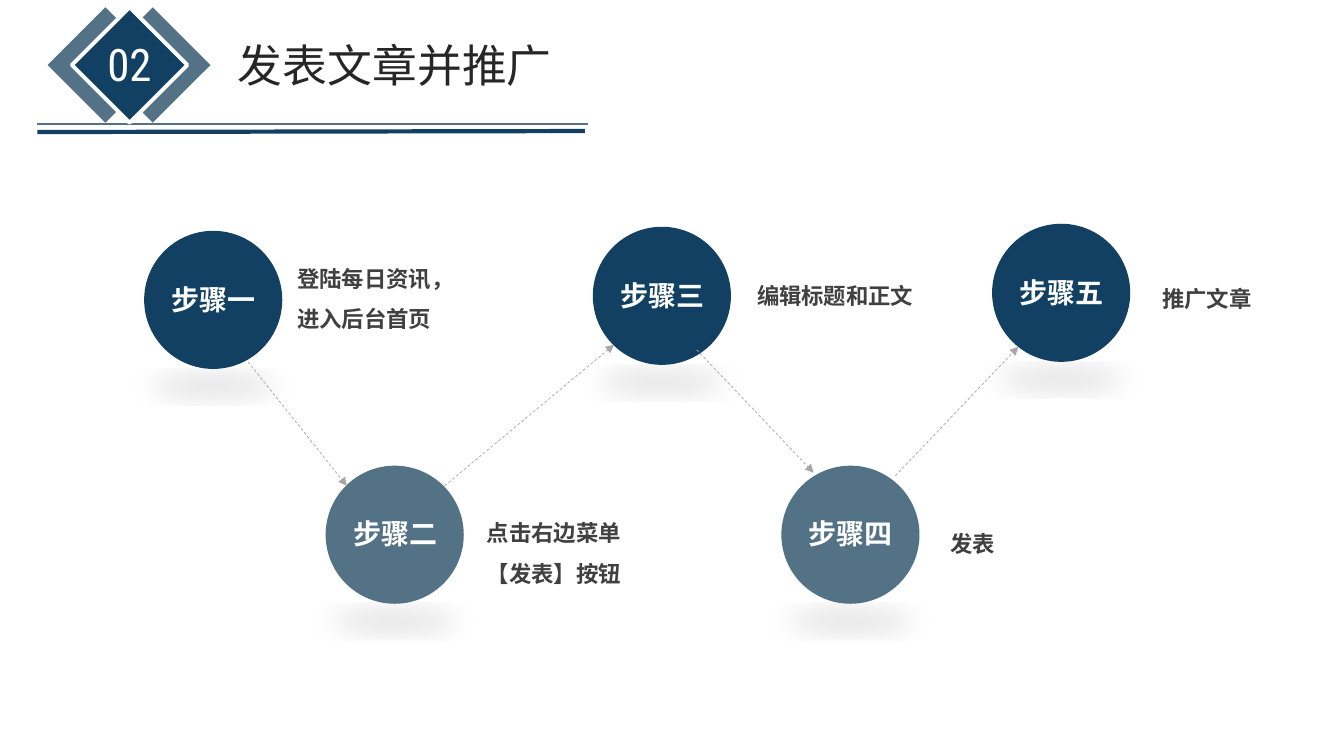
from lxml import etree
from pptx import Presentation
from pptx.dml.color import RGBColor
from pptx.enum.dml import MSO_LINE
from pptx.enum.shapes import MSO_CONNECTOR, MSO_SHAPE
from pptx.enum.text import MSO_ANCHOR, MSO_AUTO_SIZE, PP_ALIGN
from pptx.oxml import parse_xml
from pptx.oxml.ns import nsdecls, qn
from pptx.util import Inches, Pt

STRAIGHT = MSO_CONNECTOR.STRAIGHT
CIRCLE, DIAMOND = MSO_SHAPE.OVAL, MSO_SHAPE.ROUNDED_RECTANGLE
DASH = MSO_LINE.DASH
LEFT, CENTER = PP_ALIGN.LEFT, PP_ALIGN.CENTER
TOP, FIT = MSO_ANCHOR.TOP, MSO_AUTO_SIZE.SHAPE_TO_FIT_TEXT

NAVY = RGBColor(0x12, 0x40, 0x62)
SLATE = RGBColor(0x53, 0x72, 0x85)
WHITE = RGBColor(0xFF, 0xFF, 0xFF)
INK = RGBColor(0x26, 0x26, 0x26)
GRAY = RGBColor(0x40, 0x40, 0x40)
ARROW_GRAY = RGBColor(0xA6, 0xA6, 0xA6)

CJK = "Noto Sans CJK SC"
ROBOTO = "Roboto Condensed"
CIRCLE_SIZE = 1.37
CIRCLE_SHADOW = (
    f'<a:effectLst {nsdecls("a")}><a:outerShdw blurRad="241300" dist="38100" dir="5400000" '
    'sx="90000" sy="-19000" algn="b" rotWithShape="0">'
    '<a:srgbClr val="000000"><a:alpha val="10000"/></a:srgbClr></a:outerShdw></a:effectLst>'
)


class StepSlide:
    def __init__(self, deck):
        self.slide = deck.slides.add_slide(deck.slide_layouts[5])
        self.shapes = self.slide.shapes

    def set_text(self, box, text, size, color, font=CJK, bold=False, align=LEFT, spacing=1.0):
        frame = box.text_frame
        frame.word_wrap = True
        frame.auto_size = FIT
        frame.vertical_anchor = TOP
        paragraph = frame.paragraphs[0]
        paragraph.alignment = align
        paragraph.line_spacing = spacing
        run = paragraph.add_run()
        run.text = text
        run.font.size = Pt(size)
        run.font.bold = bold
        run.font.color.rgb = color
        run.font.name = font
        etree.SubElement(run.font._element, qn("a:ea")).set("typeface", CJK)

    def title(self, text, left, top, width, height):
        heading = self.shapes.title
        heading.left, heading.top = Inches(left), Inches(top)
        heading.width, heading.height = Inches(width), Inches(height)
        self.set_text(heading, text, 32, INK)

    def text(self, text, left, top, width, height, size, color, **style):
        box = self.shapes.add_textbox(Inches(left), Inches(top), Inches(width), Inches(height))
        self.set_text(box, text, size, color, **style)

    def block(self, preset, left, top, size, fill):
        block = self.shapes.add_shape(preset, Inches(left), Inches(top), Inches(size), Inches(size))
        block.shadow.inherit = False
        block.fill.solid()
        block.fill.fore_color.rgb = fill
        block.line.fill.background()
        return block

    def diamond(self, left, fill, outline=None):
        diamond = self.block(DIAMOND, left, 0.24, 0.81, fill)
        diamond.adjustments[0] = 0
        diamond.rotation = 45
        if outline:
            diamond.line.color.rgb = outline
            diamond.line.width = Pt(2.75)

    def line(self, start, end, color, width):
        line = self.shapes.add_connector(STRAIGHT, *map(Inches, start + end))
        line.line.color.rgb = color
        line.line.width = Pt(width)
        etree.SubElement(line._element.spPr, qn("a:effectLst"))
        return line

    def arrow(self, start, end):
        arrow = self.line(start, end, ARROW_GRAY, 0.5)
        arrow.line.dash_style = DASH
        stroke = arrow._element.spPr.find(qn("a:ln"))
        etree.SubElement(stroke, qn("a:tailEnd")).set("type", "triangle")

    def step(self, label, left, top, fill):
        circle = self.block(CIRCLE, left, top, CIRCLE_SIZE, fill)
        properties = circle._element.spPr
        properties.remove(properties.find(qn("a:effectLst")))
        properties.append(parse_xml(CIRCLE_SHADOW))
        self.text(label, left + 0.12, top + 0.46, 1.14, 0.44, 20, WHITE, bold=True, align=CENTER)

    def note(self, text, left, top, width, height):
        self.text(text, left, top, width, height, 16, GRAY, font=ROBOTO, bold=True, spacing=1.5)


def main():
    deck = Presentation()
    deck.slide_width, deck.slide_height = Inches(13.33), Inches(7.5)
    page = StepSlide(deck)

    page.line((5.83, 1.23), (0.37, 1.23), SLATE, 1)
    page.diamond(1.11, SLATE)
    page.diamond(0.64, SLATE)
    page.diamond(0.88, NAVY, WHITE)
    page.text("02", 0.95, 0.32, 0.67, 0.64, 32, WHITE, font=ROBOTO, align=CENTER)
    page.line((5.8, 1.3), (0.37, 1.31), NAVY, 3)
    page.title("发表文章并推广", 2.26, 0.32, 4.44, 0.64)

    steps = [
        ("步骤一", 1.43, 2.29, NAVY, ("登陆每日资讯，进入后台首页", 2.85, 2.45, 1.92, 0.91)),
        ("步骤二", 3.23, 4.62, SLATE, ("点击右边菜单【发表】按钮", 4.73, 4.97, 1.82, 0.91)),
        ("步骤三", 5.88, 2.25, NAVY, ("编辑标题和正文", 7.41, 2.62, 1.88, 0.5)),
        ("步骤四", 7.75, 4.62, SLATE, ("发表", 9.33, 5.08, 1.07, 0.5)),
        ("步骤五", 9.84, 2.22, NAVY, ("推广文章", 11.43, 2.65, 1.33, 0.5)),
    ]
    for label, left, top, fill, note in steps:
        page.step(label, left, top, fill)
        page.note(*note)

    for start, end in [
        ((2.46, 3.59), (3.44, 4.82)),
        ((4.41, 4.82), (6.09, 3.42)),
        ((6.91, 3.47), (8.07, 4.69)),
        ((8.88, 4.72), (10.1, 3.44)),
    ]:
        page.arrow(start, end)

    deck.save("out.pptx")


if __name__ == "__main__":
    main()
